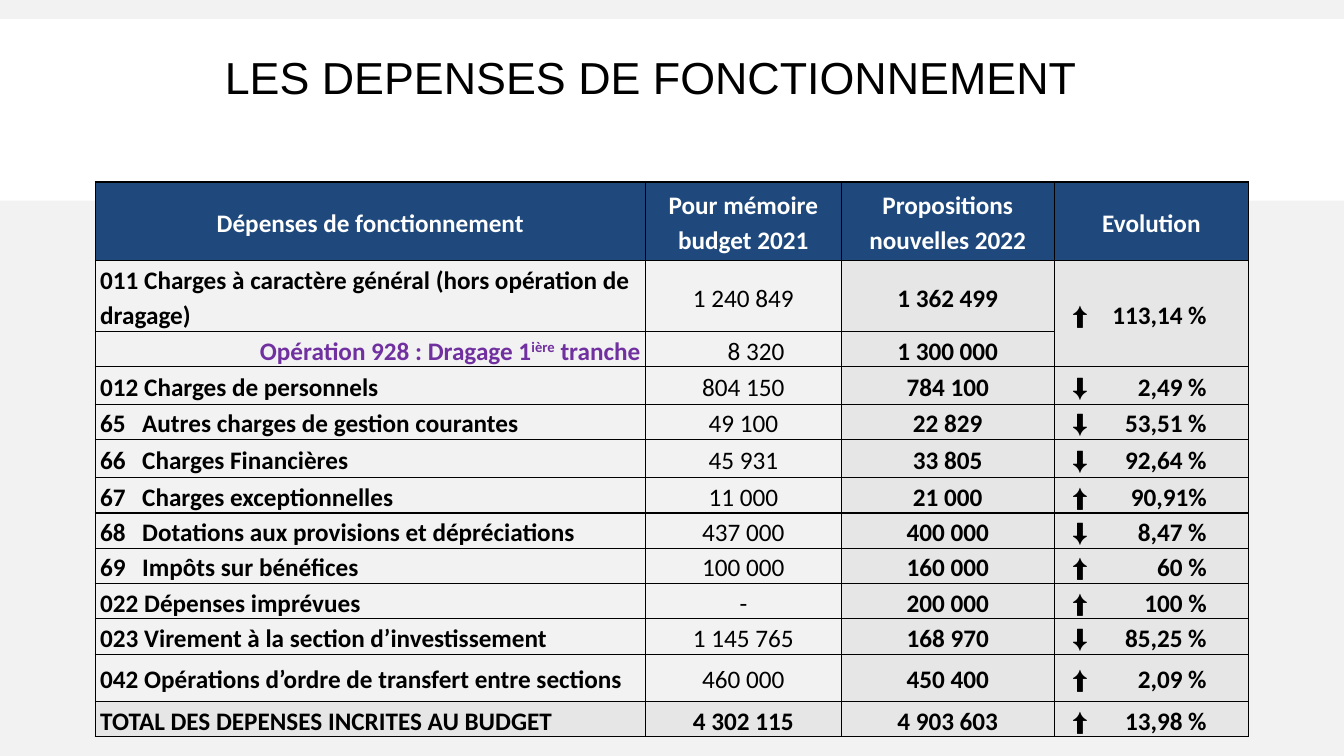
from pptx import Presentation
from pptx.dml.color import RGBColor
from pptx.enum.shapes import MSO_SHAPE
from pptx.enum.text import MSO_ANCHOR, PP_ALIGN
from pptx.oxml import parse_xml
from pptx.oxml.ns import nsdecls
from pptx.util import Pt

BLACK = RGBColor(0, 0, 0)
WHITE = RGBColor(255, 255, 255)
PAPER = RGBColor(0xF2, 0xF2, 0xF2)
NAVY = RGBColor(0x1F, 0x49, 0x7D)
GREY = RGBColor(0xE7, 0xE6, 0xE6)
PURPLE = RGBColor(0x70, 0x30, 0xA0)

LEFT, MID, RIGHT = PP_ALIGN.LEFT, PP_ALIGN.CENTER, PP_ALIGN.RIGHT
PAD = 3.6
CODE_TAB = 30
RATE_PAD = 13
RATE_TAB = 96
WIDTHS = [393, 140, 152, 139]
HEIGHTS = [56.2, 50.7, 25.2, 26.6, 25.2, 27.4] + [25.2] * 5 + [33.8, 25.2]

ROWS = [
    ("Dépenses de fonctionnement", "Pour mémoire budget 2021",
     "Propositions nouvelles 2022", "Evolution"),
    ("011 Charges à caractère général (hors opération de dragage)",
     "1 240 849", "1 362 499", "⬆\t113,14 %"),
    ("Opération 928 : Dragage 1^ière^ tranche", "8 320", "1 300 000", ""),
    ("012 Charges de personnels", "804 150", "784 100", "⬇\t2,49 %"),
    ("65\tAutres charges de gestion courantes", "49 100", "22 829", "⬇\t53,51 %"),
    ("66\tCharges Financières", "45 931", "33 805", "⬇\t92,64 %"),
    ("67\tCharges exceptionnelles", "11 000", "21 000", "⬆\t90,91%"),
    ("68\tDotations aux provisions et dépréciations",
     "437 000", "400 000", "⬇\t8,47 %"),
    ("69\tImpôts sur bénéfices", "100 000", "160 000", "⬆\t60 %"),
    ("022 Dépenses imprévues", "-", "200 000", "⬆\t100 %"),
    ("023 Virement à la section d’investissement",
     "1 145 765", "168 970", "⬇\t85,25 %"),
    ("042 Opérations d’ordre de transfert entre sections",
     "460 000", "450 400", "⬆\t2,09 %"),
    ("TOTAL DES DEPENSES INCRITES AU BUDGET",
     "4 302 115", "4 903 603", "⬆\t13,98 %"),
]
HEAD, DREDGE, TOTAL = 0, 2, len(ROWS) - 1


def apply(item, **values):
    for name, value in values.items():
        setattr(item, name, value)


def write(par, text, color, **style):
    for i, part in enumerate(text.split("^")):
        run = par.add_run()
        run.text = part
        apply(run.font, **style)
        run.font.color.rgb = color
        if i % 2:
            run.font._element.set("baseline", "30000")


def add_tab(par, place, side):
    par._p.get_or_add_pPr().append(parse_xml(
        f'<a:tabLst {nsdecls("a")}><a:tab pos="{Pt(place)}" algn="{side}"/></a:tabLst>'))


def add_edges(cell):
    for side in "LRTB":
        cell._tc.get_or_add_tcPr().append(parse_xml(
            f'<a:ln{side} {nsdecls("a")} w="{Pt(1)}"><a:solidFill>'
            f'<a:srgbClr val="{BLACK}"/></a:solidFill></a:ln{side}>'))


def draw_title(slide, x, y, w, h):
    band = slide.shapes.add_shape(
        MSO_SHAPE.RECTANGLE, Pt(x), Pt(y), Pt(w), Pt(h))
    band.shadow.inherit = False
    band.fill.solid()
    band.fill.fore_color.rgb = WHITE
    band.line.fill.background()
    box = slide.shapes.add_textbox(Pt(x + 80), Pt(y + 2), Pt(w - 190), Pt(84))
    frame = box.text_frame
    apply(frame, word_wrap=True, vertical_anchor=MSO_ANCHOR.MIDDLE)
    par = frame.paragraphs[0]
    apply(par, alignment=MID, line_spacing=0.85)
    write(par, "LES DEPENSES DE FONCTIONNEMENT", BLACK,
          name="Arial", size=Pt(32))


def fill_cell(cell, text, row, col):
    add_edges(cell)
    if row == HEAD or row == TOTAL or col > 1:
        cell.fill.solid()
        cell.fill.fore_color.rgb = NAVY if row == HEAD else GREY
    else:
        cell.fill.background()
    rate = col == 3 and row != HEAD
    start = RATE_PAD if rate else PAD
    if row == DREDGE and col == 1:
        start += 18
    apply(cell, margin_left=Pt(start), margin_right=Pt(PAD), margin_top=0,
          margin_bottom=0, vertical_anchor=MSO_ANCHOR.MIDDLE)
    align = MID if row == HEAD or col in (1, 2) else LEFT
    color = WHITE if row == HEAD else BLACK
    if row == DREDGE and col == 0:
        align, color = RIGHT, PURPLE
    par = cell.text_frame.paragraphs[0]
    apply(par, alignment=align, line_spacing=1.15)
    if "\t" in text:
        add_tab(par, *((RATE_TAB, "r") if rate else (CODE_TAB, "l")))
    write(par, text, color, name="Calibri", size=Pt(18),
          bold=col != 1 or row in (HEAD, TOTAL))


def draw_table(slide, x, y):
    table = slide.shapes.add_table(
        len(ROWS), len(WIDTHS), Pt(x), Pt(y),
        Pt(sum(WIDTHS)), Pt(sum(HEIGHTS))).table
    apply(table, first_row=False, horz_banding=False)
    for col, wide in zip(table.columns, WIDTHS):
        col.width = Pt(wide)
    for line, high in zip(table.rows, HEIGHTS):
        line.height = Pt(high)
    for row, texts in enumerate(ROWS):
        for col, text in enumerate(texts):
            fill_cell(table.cell(row, col), text, row, col)
    table.cell(DREDGE - 1, 3).merge(table.cell(DREDGE, 3))


def main():
    deck = Presentation()
    apply(deck, slide_width=Pt(960), slide_height=Pt(540))
    slide = deck.slides.add_slide(deck.slide_layouts[6])
    slide.background.fill.solid()
    slide.background.fill.fore_color.rgb = PAPER
    draw_title(slide, 0, 13.7, 960, 129.6)
    draw_table(slide, 68, 130)
    deck.save("out.pptx")


if __name__ == "__main__":
    main()
